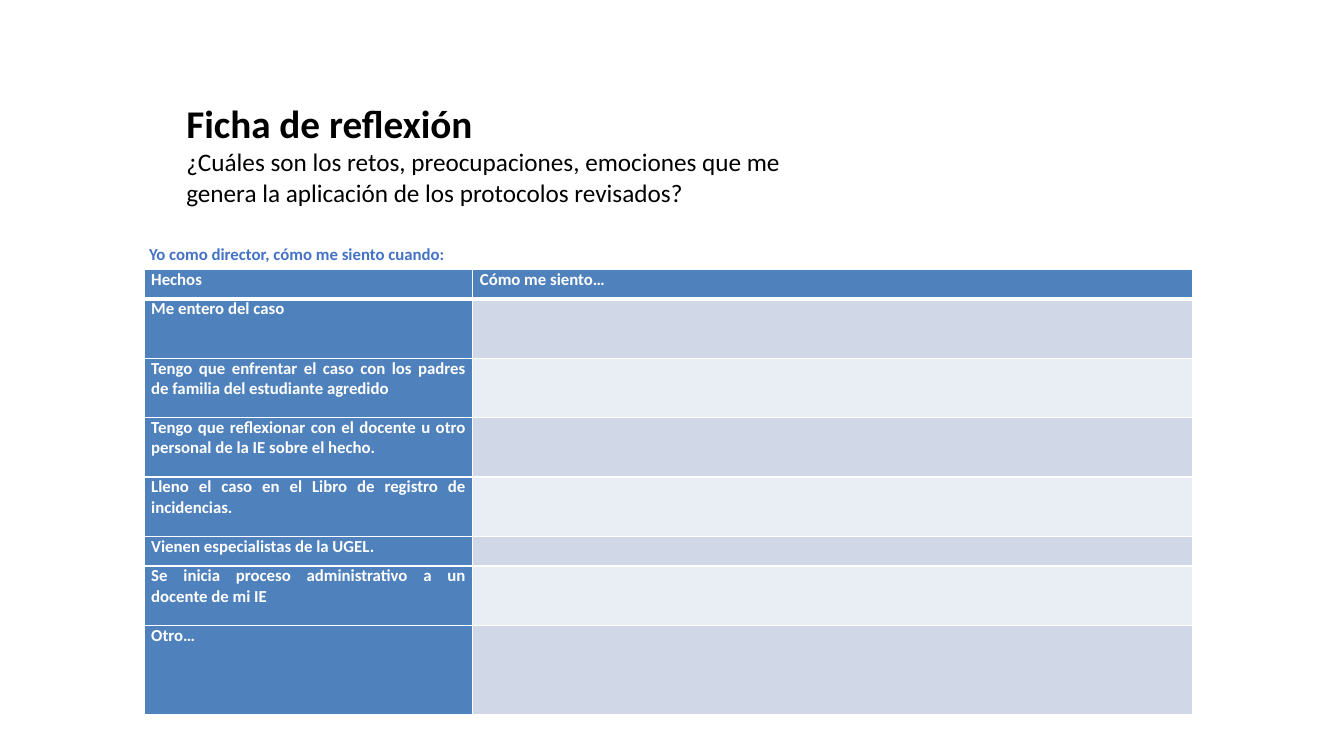
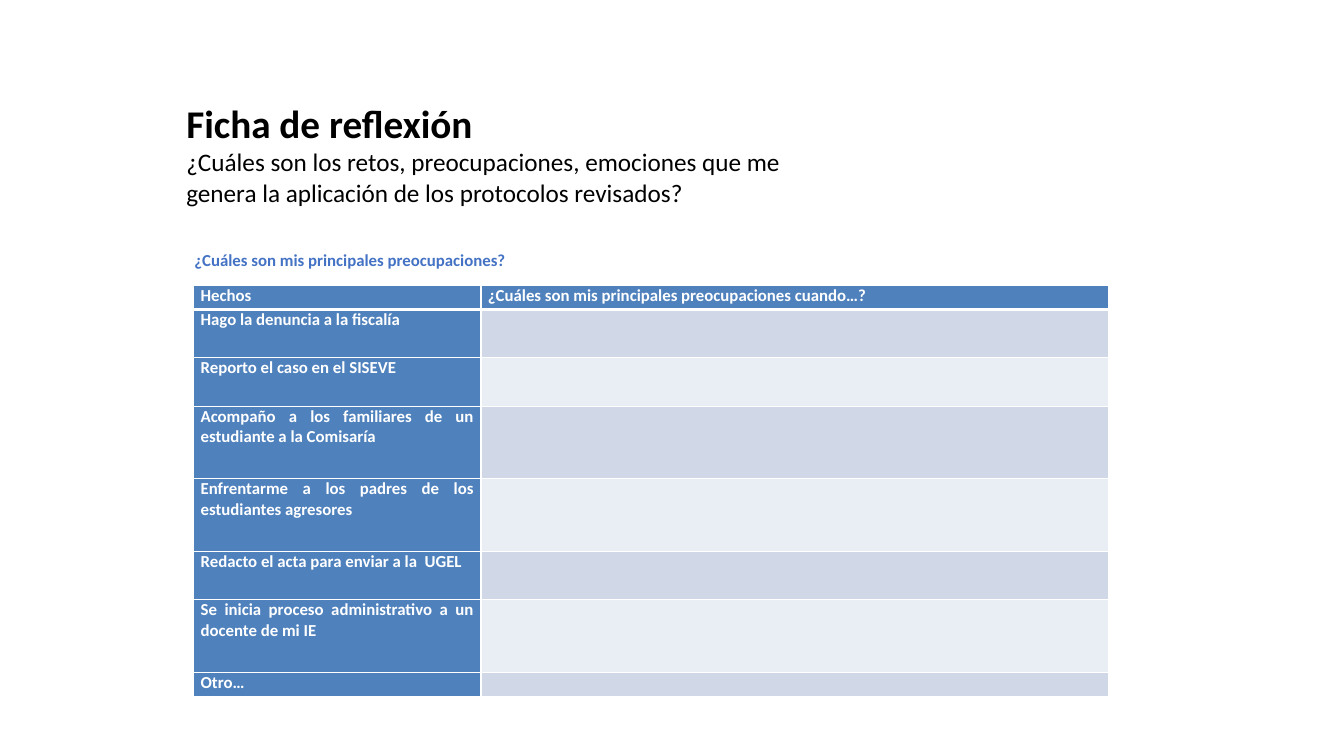
"""Build two reflection sheets, each with a heading, a caption and a table."""
import pptx
import pptx.dml.color
import pptx.enum.text
import pptx.oxml
import pptx.oxml.ns
import pptx.util

Inches = pptx.util.Inches
Pt = pptx.util.Pt
RGBColor = pptx.dml.color.RGBColor
ANCHOR = pptx.enum.text.MSO_ANCHOR
ALIGN = pptx.enum.text.PP_ALIGN

BLACK = RGBColor(0x00, 0x00, 0x00)
WHITE = RGBColor(0xFF, 0xFF, 0xFF)
CAPTION_BLUE = RGBColor(0x44, 0x72, 0xC4)
CELL_BLUE = RGBColor(0x4F, 0x81, 0xBD)
BANDS = (RGBColor(0xD0, 0xD8, 0xE8), RGBColor(0xE9, 0xED, 0xF4))

TITLE = {"size": Pt(28), "bold": True, "name": "Calibri"}
QUESTION = {"size": Pt(18), "bold": False, "name": "Calibri"}
SMALL = {"size": Pt(12), "bold": True, "name": "Calibri"}
CELL = {
    "margin_left": Inches(0.07),
    "margin_right": Inches(0.07),
    "margin_top": 0,
    "margin_bottom": 0,
    "vertical_anchor": ANCHOR.TOP,
}


class Sheet:
    def __init__(self, prs):
        self.prs = prs
        self.s = None

    def new_slide(self):
        self.s = self.prs.slides.add_slide(self.prs.slide_layouts[6])

    def apply(self, obj, fmt):
        for key, value in fmt.items():
            setattr(obj, key, value)

    def text_run(self, p, text, fmt, color):
        r = p.add_run()
        r.text = text
        self.apply(r.font, fmt)
        r.font.color.rgb = color

    def text_box(self, box, fmt):
        tf = self.s.shapes.add_textbox(*map(Inches, box)).text_frame
        self.apply(tf, {"word_wrap": True, **fmt})
        return tf

    def heading(self):
        tf = self.text_box((1.75, 0.94, 6.67, 1.18), {})
        self.text_run(tf.paragraphs[0], "Ficha de reflexión", TITLE, BLACK)
        self.text_run(
            tf.add_paragraph(),
            "¿Cuáles son los retos, preocupaciones, emociones que me "
            "genera la aplicación de los protocolos revisados?",
            QUESTION,
            BLACK,
        )

    def caption(self, text, left, top, anchor):
        fmt = {"margin_top": 0, "margin_bottom": 0, "vertical_anchor": anchor}
        tf = self.text_box((left, top, 9, 0.5), fmt)
        self.text_run(tf.paragraphs[0], text, SMALL, CAPTION_BLUE)

    def borders(self, cell, row):
        widths = {"L": 1, "R": 1, "T": 3 if row == 1 else 1, "B": 3 if row == 0 else 1}
        tc_pr = cell._tc.get_or_add_tcPr()
        for side, width in widths.items():
            tc_pr.append(pptx.oxml.parse_xml(
                f'<a:ln{side} {pptx.oxml.ns.nsdecls("a")} w="{Pt(width)}">'
                f'<a:solidFill><a:srgbClr val="{WHITE}"/></a:solidFill></a:ln{side}>'
            ))

    def cell(self, cell, row, text, fill):
        self.apply(cell, CELL)
        self.borders(cell, row)
        cell.fill.solid()
        cell.fill.fore_color.rgb = fill
        p = cell.text_frame.paragraphs[0]
        if text:
            p.alignment = ALIGN.JUSTIFY
            self.text_run(p, text, SMALL, WHITE)
        else:
            p._p.get_or_add_endParaRPr().set("sz", "1200")

    def table(self, left, top, cols, unit, answer, facts):
        rows = [("Hechos", answer, 1)] + [(fact, "", n) for fact, n in facts]
        height = unit * sum(n for _, _, n in rows)
        size = map(Inches, (left, top, sum(cols), height))
        tbl = self.s.shapes.add_table(len(rows), len(cols), *size).table
        for column, width in zip(tbl.columns, cols):
            column.width = Inches(width)
        for i, (fact, reply, n) in enumerate(rows):
            tbl.rows[i].height = Inches(unit * n)
            self.cell(tbl.cell(i, 0), i, fact, CELL_BLUE)
            fill = BANDS[(i - 1) % 2] if i else CELL_BLUE
            self.cell(tbl.cell(i, 1), i, reply, fill)


FEELINGS = [
    ("Me entero del caso", 2),
    ("Tengo que enfrentar el caso con los padres de familia del estudiante agredido", 2),
    ("Tengo que reflexionar con el docente u otro personal de la IE sobre el hecho.", 2),
    ("Lleno el caso en el Libro de registro de incidencias.", 2),
    ("Vienen especialistas de la UGEL.", 1),
    ("Se inicia proceso administrativo a un docente de mi IE", 2),
    ("Otro…", 3),
]
CONCERNS = [
    ("Hago la denuncia a la fiscalía", 2),
    ("Reporto el caso en el SISEVE", 2),
    ("Acompaño a los familiares de un estudiante a la Comisaría", 3),
    ("Enfrentarme a los padres de los estudiantes agresores", 3),
    ("Redacto el acta para enviar a la  UGEL", 2),
    ("Se inicia proceso administrativo a un docente de mi IE", 3),
    ("Otro…", 1),
]
SHEETS = [
    (
        ("Yo como director, cómo me siento cuando:", 1.38, 2.42, ANCHOR.TOP),
        (1.43, 2.67, (3.26, 7.14), 4.42 / 15, "Cómo me siento…", FEELINGS),
    ),
    (
        ("¿Cuáles son mis principales preocupaciones?", 1.83, 2.33, ANCHOR.MIDDLE),
        (1.92, 2.83, (2.85, 6.23), 0.24,
         "¿Cuáles son mis principales preocupaciones cuando…?", CONCERNS),
    ),
]


def main():
    prs = pptx.Presentation()
    prs.slide_width = Inches(13.33)
    prs.slide_height = Inches(7.5)
    sheet = Sheet(prs)
    for caption, table in SHEETS:
        sheet.new_slide()
        sheet.heading()
        sheet.table(*table)
        sheet.caption(*caption)
    prs.save("out.pptx")


if __name__ == "__main__":
    main()
